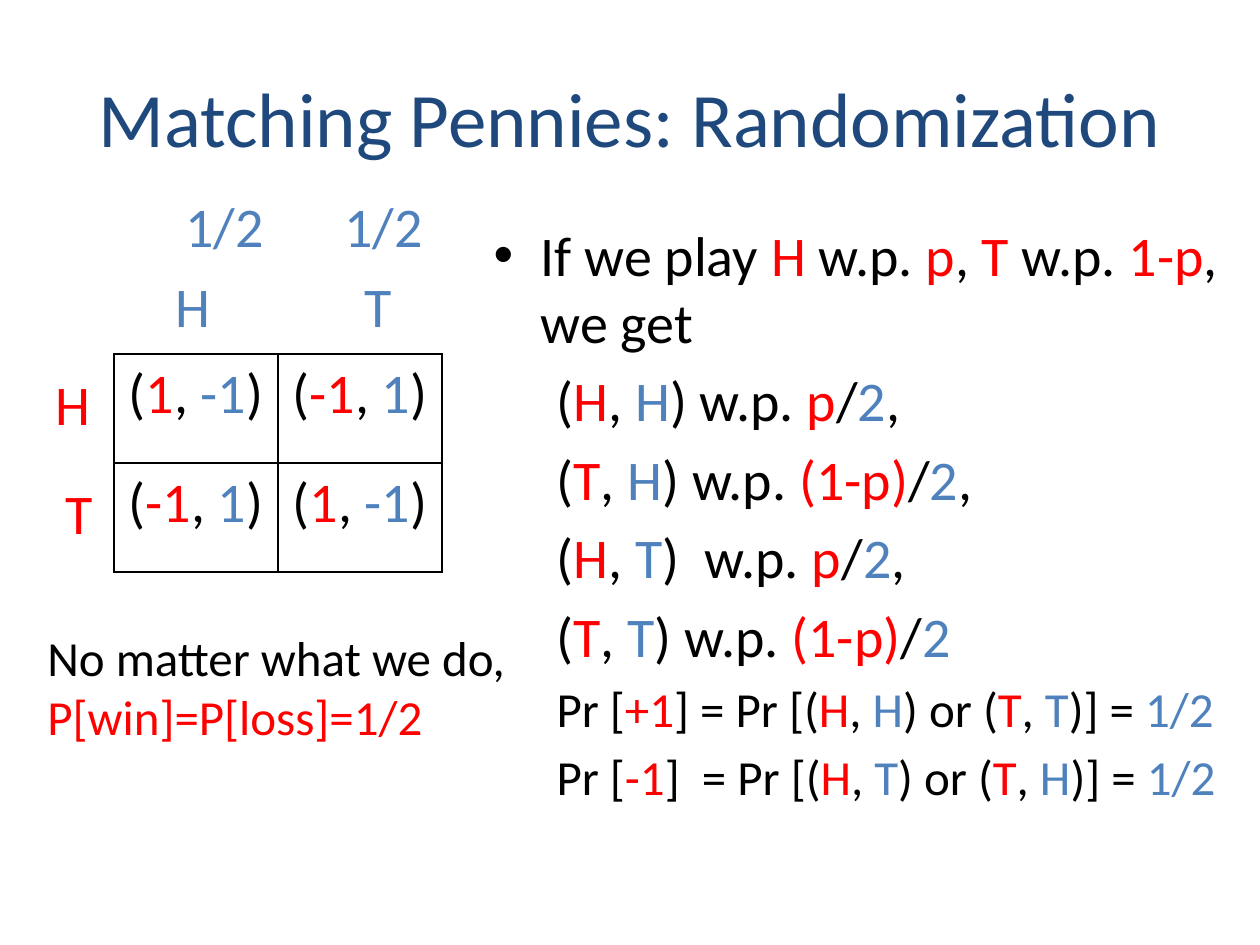
from lxml.etree import SubElement
from pptx import Presentation
from pptx.dml.color import RGBColor
from pptx.enum.text import MSO_ANCHOR, MSO_AUTO_SIZE, PP_ALIGN
from pptx.oxml.ns import qn
from pptx.util import Emu, Pt

COLORS = {"title": "1F497D", "text": "000000", "us": "FF0000", "them": "4F81BD"}
MARKS = {"*": "us", "~": "them"}
FONT = "Calibri"

OUTCOMES = [
    "(|*H|, |~H|) w.p. |*p|/|~2|,",
    "(|*T|, |~H|) w.p. |*(1-p)|/|~2|,",
    "(|*H|, |~T|)  w.p. |*p|/|~2|,",
    "(|*T|, |~T|) w.p. |*(1-p)|/|~2",
]
TOTALS = [
    "Pr [|*+1|] = Pr [(|*H|, |~H|) or (|*T|, |~T|)] = |~1/2",
    "Pr [|*-1|]  = Pr [(|*H|, |~T|) or (|*T|, |~H|)] = |~1/2",
]
WIN, LOSS = "(|*1|, |~-1|)", "(|*-1|, |~1|)"
PAYOFFS = [[WIN, LOSS], [LOSS, WIN]]


def px(length):
    return Emu(round(length * 914400 / 126))


def add_runs(paragraph, marked, size, base="text"):
    for piece in marked.split("|"):
        if piece == "\n":
            paragraph.add_line_break()
            continue
        role = MARKS.get(piece[0], base)
        run = paragraph.add_run()
        run.text = piece[1:] if piece[0] in MARKS else piece
        run.font.name = FONT
        run.font.size = Pt(size)
        run.font.color.rgb = RGBColor.from_string(COLORS[role])


def place(shape, left, top, width, height):
    shape.left, shape.top = px(left), px(top)
    shape.width, shape.height = px(width), px(height)


def add_label(slide, left, top, width, height, marked, size=32):
    label = slide.shapes.add_textbox(px(left), px(top), px(width), px(height))
    label.text_frame.word_wrap = False
    add_runs(label.text_frame.paragraphs[0], marked, size)


def draw_title(slide, left, top, width, height):
    title = slide.shapes.title
    place(title, left, top, width, height)
    title.text_frame.vertical_anchor = MSO_ANCHOR.MIDDLE
    heading = title.text_frame.paragraphs[0]
    heading.alignment = PP_ALIGN.CENTER
    add_runs(heading, "Matching Pennies: Randomization", 44, "title")


def draw_analysis(slide, left, top, width, height):
    body = slide.placeholders[1]
    place(body, left, top, width, height)
    frame = body.text_frame
    frame.auto_size = MSO_AUTO_SIZE.NONE
    add_runs(frame.paragraphs[0],
             "If we play |*H| w.p. |*p|, |*T| w.p. |*1-p|, we get", 32)
    for lines, size in ((OUTCOMES, 32), (TOTALS, 28)):
        for line in lines:
            result = frame.add_paragraph()
            result.level = 1
            properties = result._p.get_or_add_pPr()
            properties.set("marL", str(px(110)))
            properties.set("indent", str(-px(47)))
            SubElement(properties, qn("a:buNone"))
            add_runs(result, line, size)


def style_cell(cell):
    properties = cell._tc.get_or_add_tcPr()
    for side in ("lnL", "lnR", "lnT", "lnB"):
        border = SubElement(properties, qn(f"a:{side}"), w=str(Pt(1)))
        fill = SubElement(border, qn("a:solidFill"))
        SubElement(fill, qn("a:srgbClr"), val=COLORS["text"])
    cell.fill.background()


def draw_game(slide, left, top, column, row):
    game = slide.shapes.add_table(2, 2, px(left), px(top),
                                  px(2 * column), px(2 * row)).table
    game.first_row = game.horz_banding = False
    for i, payoffs in enumerate(PAYOFFS):
        game.rows[i].height = px(row)
        game.columns[i].width = px(column)
        for j, payoff in enumerate(payoffs):
            cell = game.cell(i, j)
            style_cell(cell)
            pair = cell.text_frame.paragraphs[0]
            pair.alignment = PP_ALIGN.CENTER
            add_runs(pair, payoff, 32)

    for side, dx, width in (("H", 49, 60), ("T", 238, 53)):
        add_label(slide, left + dx, top - 89, width, 81, f"~{side}")
    for side, dx, dy, width in (("H", -71, 9, 60), ("T", -61, 118, 53)):
        add_label(slide, left + dx, top + dy, width, 81, f"*{side}")
    for dx in (59, 218):
        add_label(slide, left + dx, top - 169, 105, 81, "~1/2")


def draw_conclusion(slide, left, top, width, height):
    add_label(slide, left, top, width, height,
              "No matter what we do,|\n|*P[win]=P[loss]=1/2", 28)


def main():
    deck = Presentation()
    deck.slide_width, deck.slide_height = px(1260), px(945)
    slide = deck.slides.add_slide(deck.slide_layouts[1])
    draw_title(slide, 63, 38, 1134, 157)
    draw_analysis(slide, 481, 214, 779, 731)
    draw_game(slide, 114, 354, 164, 109)
    draw_conclusion(slide, 35, 621, 489, 131)
    deck.save("out.pptx")


if __name__ == "__main__":
    main()
